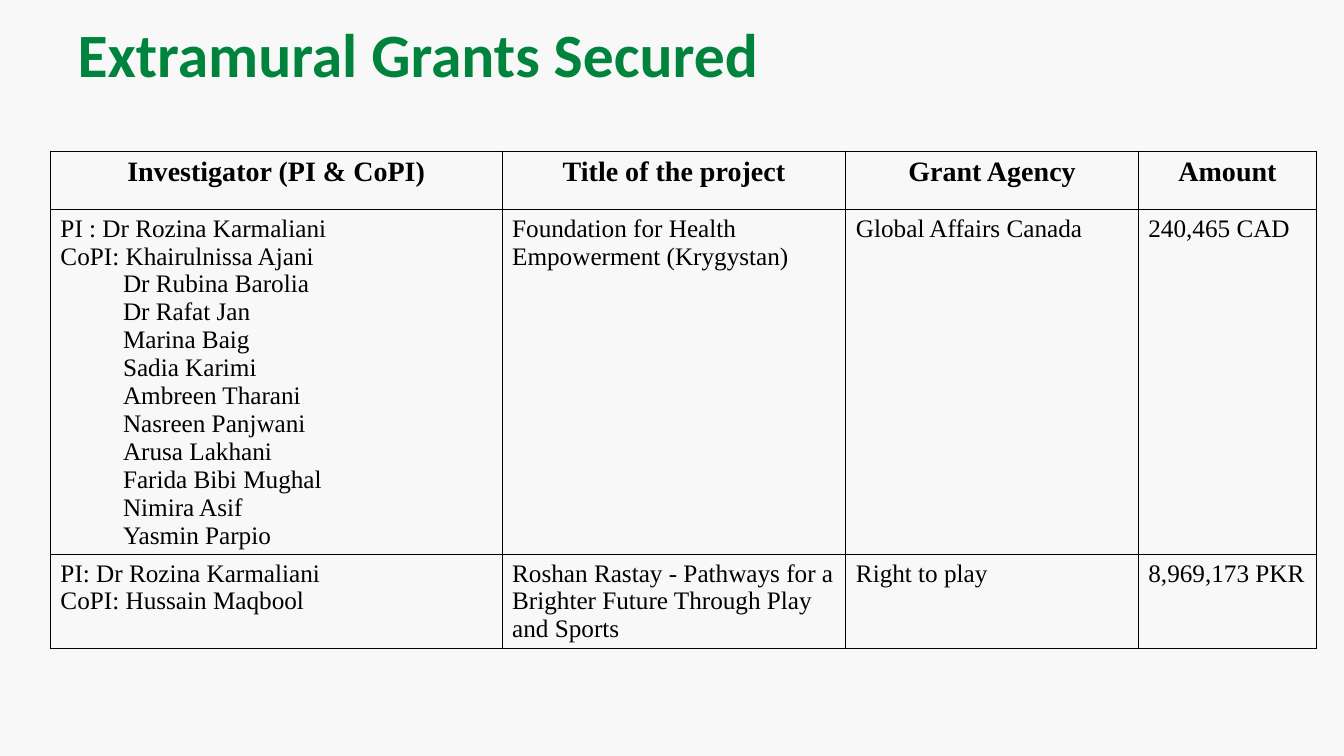
from lxml import etree
from pptx import Presentation
from pptx.dml.color import RGBColor
from pptx.enum.text import MSO_ANCHOR, MSO_AUTO_SIZE, PP_ALIGN
from pptx.oxml.ns import qn
from pptx.util import Inches, Pt

LEFT, CENTER = PP_ALIGN.LEFT, PP_ALIGN.CENTER
MIDDLE = MSO_ANCHOR.MIDDLE
NO_AUTOFIT = MSO_AUTO_SIZE.NONE

# Content: each cell is a list of paragraphs
TITLE = "Extramural Grants Secured"
HEADERS = ["Investigator (PI & CoPI)", "Title of the project", "Grant Agency", "Amount"]
GRANTS = [
    [
        ["PI : Dr Rozina Karmaliani", "CoPI: Khairulnissa Ajani",
         "Dr Rubina Barolia", "Dr Rafat Jan", "Marina Baig", "Sadia Karimi",
         "Ambreen Tharani", "Nasreen Panjwani", "Arusa Lakhani",
         "Farida Bibi Mughal", "Nimira Asif", "Yasmin Parpio"],
        ["Foundation for Health Empowerment (Krygystan)"],
        ["Global Affairs Canada"],
        ["240,465 CAD"],
    ],
    [
        ["PI: Dr Rozina Karmaliani", "CoPI: Hussain Maqbool"],
        ["Roshan Rastay - Pathways for a Brighter Future Through Play and Sports"],
        ["Right to play"],
        ["8,969,173 PKR"],
    ],
]
COLUMN_WIDTHS = [4.48, 3.41, 2.9, 1.77]
ROW_HEIGHTS = [0.58, 3.41, 0.93]
LABELLED_LINES = 2  # the PI and first CoPI lines; further names are indented
NAME_INDENT = 0.62

GREEN, BLACK, BACKGROUND = "00843D", "000000", "F8F8F8"


def color(value):
    return RGBColor.from_string(value)


def format_paragraph(para, font_name, size, bold, value, align):
    para.alignment = align
    for span in para.runs:
        span.font.name = font_name
        span.font.size = Pt(size)
        span.font.bold = bold
        span.font.color.rgb = color(value)


def add_borders(cell):
    properties = cell._tc.get_or_add_tcPr()
    for position, side in enumerate(("a:lnL", "a:lnR", "a:lnT", "a:lnB")):
        line = etree.Element(qn(side), w=str(Pt(1)))
        fill = etree.SubElement(line, qn("a:solidFill"))
        etree.SubElement(fill, qn("a:srgbClr"), val=BLACK)
        properties.insert(position, line)


def fill_cell(cell, lines, is_header):
    cell.fill.background()
    add_borders(cell)
    cell.text_frame.text = "\n".join(lines)
    for number, para in enumerate(cell.text_frame.paragraphs):
        if number >= LABELLED_LINES:
            properties = para._p.get_or_add_pPr()
            properties.set("marL", str(Inches(NAME_INDENT)))
            properties.set("indent", "0")
        format_paragraph(para, "Times New Roman", 20 if is_header else 18,
                         is_header, BLACK, CENTER if is_header else LEFT)


# Slide and background
deck = Presentation()
deck.slide_width, deck.slide_height = Inches(13.33), Inches(7.5)
page = deck.slides.add_slide(deck.slide_layouts[5])
page.background.fill.solid()
page.background.fill.fore_color.rgb = color(BACKGROUND)

# Title
title = page.shapes.title
title.left, title.top = Inches(0.67), Inches(0.05)
title.width, title.height = Inches(12), Inches(0.95)
title.text_frame.text = TITLE
title.text_frame.auto_size = NO_AUTOFIT
title.text_frame.vertical_anchor = MIDDLE
format_paragraph(title.text_frame.paragraphs[0], "Calibri", 44, True, GREEN, LEFT)

# Grants table
rows = [[[header] for header in HEADERS]] + GRANTS
table = page.shapes.add_table(
    len(rows), len(HEADERS), Inches(0.5), Inches(1.5),
    Inches(sum(COLUMN_WIDTHS)), Inches(sum(ROW_HEIGHTS))).table
table.horz_banding = False
for column, width in zip(table.columns, COLUMN_WIDTHS):
    column.width = Inches(width)
for row, height in zip(table.rows, ROW_HEIGHTS):
    row.height = Inches(height)
for row_number, row in enumerate(rows):
    for column_number, lines in enumerate(row):
        fill_cell(table.cell(row_number, column_number), lines, row_number == 0)

deck.save("out.pptx")
